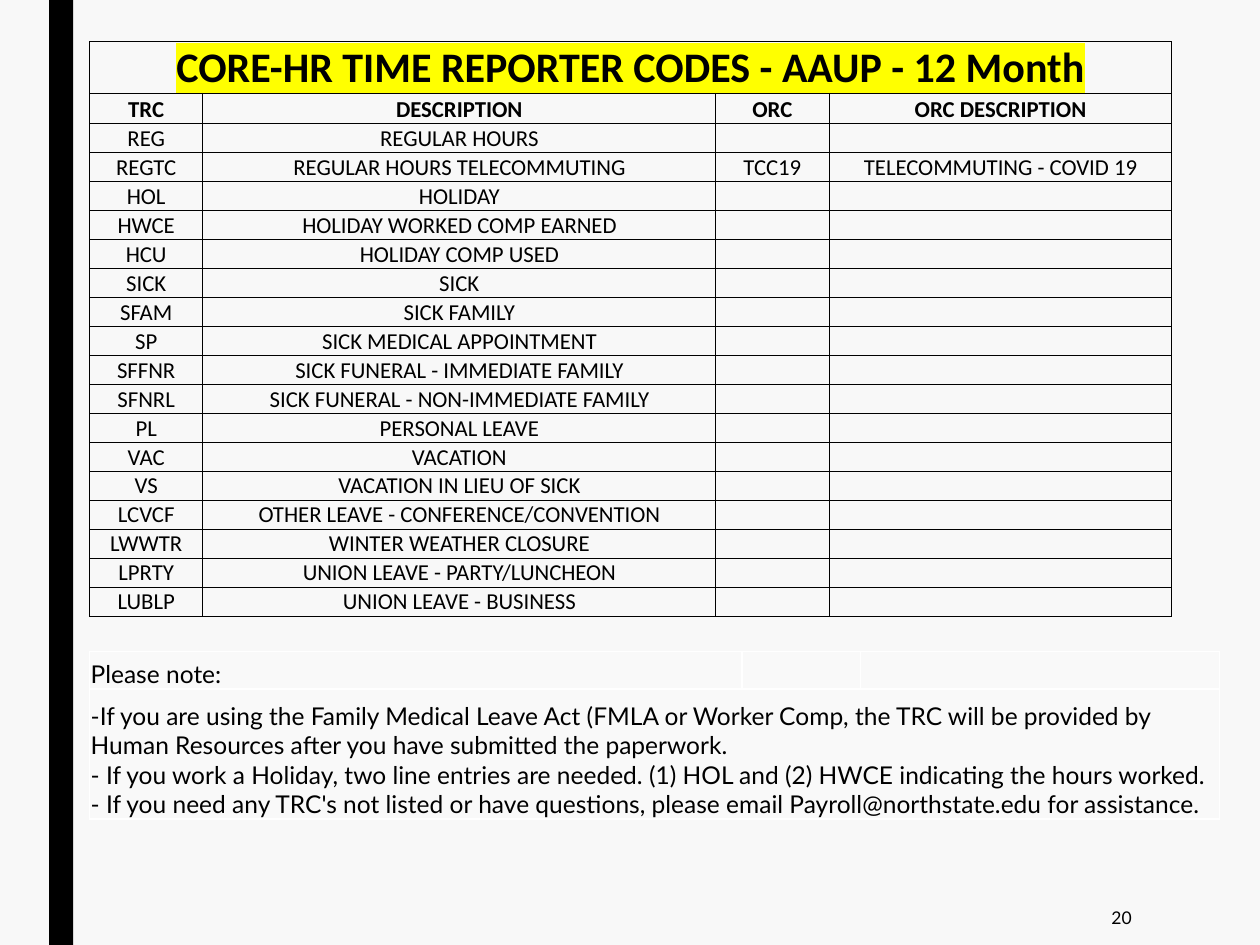
from lxml import etree
from pptx import Presentation
from pptx.dml.color import RGBColor
from pptx.enum.shapes import MSO_SHAPE
from pptx.enum.text import MSO_ANCHOR, PP_ALIGN
from pptx.oxml.ns import qn
from pptx.util import Inches, Pt

RECTANGLE = MSO_SHAPE.RECTANGLE
MIDDLE, BOTTOM = MSO_ANCHOR.MIDDLE, MSO_ANCHOR.BOTTOM
LEFT, CENTER, RIGHT = PP_ALIGN.LEFT, PP_ALIGN.CENTER, PP_ALIGN.RIGHT

COLORS = {"page": "F8F8F8", "ink": "000000", "mark": "FFFF00",
          "note": "F9F9F9", "note_line": "FFFFFF"}
SIDES = ("L", "R", "T", "B")
MARGIN = 0.71

TITLE = "CORE-HR TIME REPORTER CODES - AAUP - 12 Month"
HEADINGS = ("TRC", "DESCRIPTION", "ORC", "ORC DESCRIPTION")
CODES = [
    ("REG", "REGULAR HOURS"),
    ("REGTC", "REGULAR HOURS TELECOMMUTING", "TCC19", "TELECOMMUTING - COVID 19"),
    ("HOL", "HOLIDAY"),
    ("HWCE", "HOLIDAY WORKED COMP EARNED"),
    ("HCU", "HOLIDAY COMP USED"),
    ("SICK", "SICK"),
    ("SFAM", "SICK FAMILY"),
    ("SP", "SICK MEDICAL APPOINTMENT"),
    ("SFFNR", "SICK FUNERAL - IMMEDIATE FAMILY"),
    ("SFNRL", "SICK FUNERAL - NON-IMMEDIATE FAMILY"),
    ("PL", "PERSONAL LEAVE"),
    ("VAC", "VACATION"),
    ("VS", "VACATION IN LIEU OF SICK"),
    ("LCVCF", "OTHER LEAVE - CONFERENCE/CONVENTION"),
    ("LWWTR", "WINTER WEATHER CLOSURE"),
    ("LPRTY", "UNION LEAVE - PARTY/LUNCHEON"),
    ("LUBLP", "UNION LEAVE - BUSINESS"),
]
NOTE_HEADING = "Please note:"
NOTES = [
    "-If you are using the Family Medical Leave Act (FMLA or Worker Comp, the TRC will "
    "be provided by Human Resources after you have submitted the paperwork.",
    "- If you work a Holiday, two line entries are needed. (1) HOL and (2) HWCE "
    "indicating the hours worked.",
    "- If you need any TRC's not listed or have questions, please email "
    "Payroll@northstate.edu for assistance.",
]


def write_text(frame, lines, size=13, font="Calibri", bold=False,
               underline=False, align=CENTER, highlight=None):
    for number, line in enumerate(lines):
        para = frame.add_paragraph() if number else frame.paragraphs[0]
        para.alignment = align
        span = para.add_run()
        span.text = line
        span.font.size = Pt(size)
        span.font.name = font
        span.font.bold = bold
        span.font.underline = underline
        span.font.color.rgb = RGBColor.from_string(COLORS["ink"])
        if highlight:
            mark = etree.Element(qn("a:highlight"))
            etree.SubElement(mark, qn("a:srgbClr"), val=COLORS[highlight])
            span.font.fill  # the highlight follows the text fill
            span.font._element.find(qn("a:solidFill")).addnext(mark)


def set_borders(cell, color, width, sides):
    properties = cell._tc.get_or_add_tcPr()
    for side in SIDES:
        line = etree.SubElement(properties, qn(f"a:ln{side}"), w=str(int(Pt(width))))
        if side in sides:
            fill = etree.SubElement(line, qn("a:solidFill"))
            etree.SubElement(fill, qn("a:srgbClr"), val=COLORS[color])
        else:
            etree.SubElement(line, qn("a:noFill"))


def format_cell(cell, color, width, sides=SIDES, fill=None):
    cell.margin_left = cell.margin_right = cell.margin_top = Inches(0.01)
    cell.margin_bottom = 0
    cell.vertical_anchor = BOTTOM
    set_borders(cell, color, width, sides)
    if fill:
        cell.fill.solid()
        cell.fill.fore_color.rgb = RGBColor.from_string(COLORS[fill])
    else:
        cell.fill.background()
    # a small end mark keeps empty rows at their set height
    etree.SubElement(cell.text_frame.paragraphs[0]._p, qn("a:endParaRPr"), sz="600")


def add_grid(page, top, widths, heights):
    table = page.shapes.add_table(
        len(heights), len(widths), Inches(MARGIN), Inches(top),
        Inches(sum(widths)), Inches(sum(heights))).table
    table.first_row = table.horz_banding = False
    for column, width in zip(table.columns, widths):
        column.width = Inches(width)
    for row, height in zip(table.rows, heights):
        row.height = Inches(height)
    return table


def add_codes(page):
    spacer = len(CODES) + 2
    heights = [0.33, 0.24] + [0.23] * (len(CODES) + 1) + [0.14]
    table = add_grid(page, 0.33, (0.9, 4.07, 0.9, 2.72), heights)
    for row in range(len(heights)):
        sides = SIDES if row < spacer else ("T",) if row == spacer else ()
        for column in range(len(HEADINGS)):
            format_cell(table.cell(row, column), "ink", 0.5, sides)
    table.cell(0, 0).merge(table.cell(0, 3))
    table.cell(spacer + 1, 0).merge(table.cell(spacer + 1, 1))

    write_text(table.cell(0, 0).text_frame, [TITLE], size=24, bold=True, highlight="mark")
    for row, texts in enumerate([HEADINGS] + CODES, start=1):
        for column, text in enumerate(texts):
            write_text(table.cell(row, column).text_frame, [text], bold=row == 1)


def add_notes(page):
    table = add_grid(page, 5.17, (5.18, 0.94, 2.85), (0.3, 1.03))
    for cell in table.iter_cells():
        format_cell(cell, "note_line", 1, fill="note")
    table.cell(1, 0).merge(table.cell(1, 2))
    style = {"size": 14, "font": "Lato", "align": LEFT}
    write_text(table.cell(0, 0).text_frame, [NOTE_HEADING], underline=True, **style)
    write_text(table.cell(1, 0).text_frame, NOTES, **style)


def add_side_bar(page, height):
    bar = page.shapes.add_shape(RECTANGLE, Inches(0.39), 0, Inches(0.19), height)
    bar.shadow.inherit = False
    bar.fill.solid()
    bar.fill.fore_color.rgb = RGBColor.from_string(COLORS["ink"])
    bar.line.fill.background()


def add_page_number(page, number):
    box = page.shapes.add_textbox(Inches(7.77), Inches(7.06), Inches(1.31), Inches(0.44))
    box.text_frame.word_wrap = True
    box.text_frame.vertical_anchor = MIDDLE
    write_text(box.text_frame, [number], size=10, font="Lato", align=RIGHT)


def main():
    deck = Presentation()
    deck.slide_width, deck.slide_height = Inches(10), Inches(7.5)
    page = deck.slides.add_slide(deck.slide_layouts[6])
    page.background.fill.solid()
    page.background.fill.fore_color.rgb = RGBColor.from_string(COLORS["page"])

    add_side_bar(page, deck.slide_height)
    add_page_number(page, "20")
    add_codes(page)
    add_notes(page)
    deck.save("out.pptx")


if __name__ == "__main__":
    main()
